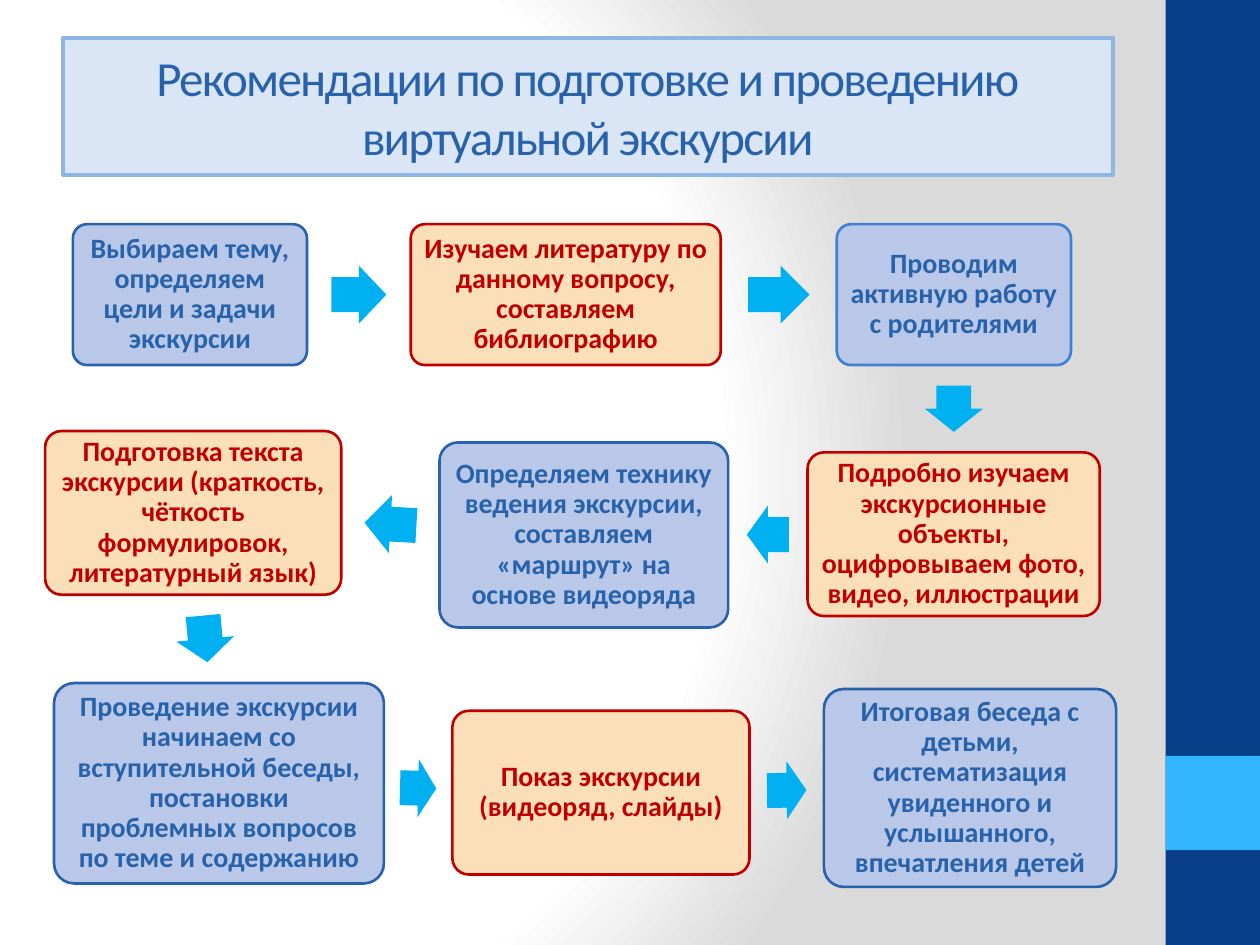
import math

from lxml import etree
from pptx import Presentation
from pptx import util as u
from pptx.dml.color import RGBColor
from pptx.enum import shapes, text
from pptx.oxml import parse_xml
from pptx.oxml.ns import nsdecls, qn

TITLE = "Рекомендации по подготовке и проведению\vвиртуальной экскурсии"
# fill, line, font
BLUE = ("B9C8E8", "2862AA", "2862AA")
LIGHT_BLUE = ("B9C8E8", "4081D2", "2862AA")
RED = ("FADFB8", "C00000", "C00000")

# Steps in reading order: text, palette, (left, top, width, height) in cm
STEPS = [
    ("Выбираем тему, определяем цели и задачи экскурсии",
     BLUE, (1.47, 4.52, 4.72, 2.84)),
    ("Изучаем литературу по данному вопросу, составляем библиографию",
     RED, (8.28, 4.52, 6.25, 2.84)),
    ("Проводим активную работу с родителями",
     LIGHT_BLUE, (16.87, 4.52, 4.72, 2.84)),
    ("Подробно изучаем экскурсионные объекты, оцифровываем фото, видео, иллюстрации",
     RED, (16.28, 9.12, 5.89, 3.3)),
    ("Определяем технику ведения экскурсии, составляем «маршрут» на основе видеоряда",
     BLUE, (8.86, 8.92, 5.82, 3.73)),
    ("Подготовка текста экскурсии (краткость, чёткость формулировок, литературный язык)",
     RED, (0.91, 8.69, 5.97, 3.3)),
    ("Проведение экскурсии начинаем со вступительной беседы, постановки "
     "проблемных вопросов по теме и содержанию",
     BLUE, (1.09, 13.77, 6.65, 4.04)),
    ("Показ экскурсии (видеоряд, слайды)",
     RED, (9.12, 14.33, 5.99, 3.3)),
    ("Итоговая беседа с детьми, систематизация увиденного и услышанного, "
     "впечатления детей",
     BLUE, (16.61, 13.89, 5.89, 3.99)),
]
ARROW_HEIGHT = 1.17
ARROW_SHARE = 0.53  # arrow length as a share of the gap between two steps

prs = Presentation()
prs.slide_width, prs.slide_height = u.Cm(25.4), u.Cm(19.05)
slide = prs.slides.add_slide(prs.slide_layouts[6])


def color(value):
    return RGBColor.from_string(value)


def add_block(kind, place, fill, line=None, width=0):
    block = slide.shapes.add_shape(kind, *map(u.Cm, place))
    block.shadow.inherit = False
    block.fill.solid()
    block.fill.fore_color.rgb = color(fill)
    if line:
        block.line.color.rgb = color(line)
        block.line.width = u.Pt(width)
    else:
        block.line.fill.background()
    return block


def write(block, words, size, font_color, bold=False, inset=None):
    frame = block.text_frame
    frame.word_wrap = True
    frame.vertical_anchor = text.MSO_ANCHOR.MIDDLE
    if inset is not None:
        frame.margin_left = frame.margin_right = u.Cm(inset)
        frame.margin_top = frame.margin_bottom = u.Cm(inset)
    frame.text = words
    paragraph = frame.paragraphs[0]
    paragraph.alignment = text.PP_ALIGN.CENTER
    font = paragraph.font
    font.name, font.size, font.bold = "Calibri", u.Pt(size), bold
    font.color.rgb = color(font_color)
    return paragraph


def add_arrow(start, end):
    """Arrow in the middle of the gap, along the line between step centres."""
    (x1, y1), (x2, y2) = [(l + w / 2, t + h / 2) for l, t, w, h in (start, end)]
    dx, dy = x2 - x1, y2 - y1
    axis = 0 if abs(dx) > abs(dy) else 1
    first, second = sorted((start, end), key=lambda place: place[axis])
    near, far = first[axis] + first[axis + 2], second[axis]
    share = ((near + far) / 2 - (x1, y1)[axis]) / (dx, dy)[axis]
    length = ARROW_SHARE * (far - near)
    arrow = add_block(
        shapes.MSO_SHAPE.RIGHT_ARROW,
        (x1 + dx * share - length / 2, y1 + dy * share - ARROW_HEIGHT / 2,
         length, ARROW_HEIGHT), "00B0F0")
    arrow.adjustments[0], arrow.adjustments[1] = 0.6, 0.5
    arrow.rotation = math.degrees(math.atan2(dy, dx)) % 360


# Background gradient
slide.background.fill.solid()
properties = slide.background._cSld.find(".//" + qn("p:bgPr"))
properties.replace(properties[0], parse_xml(
    f'<a:gradFill {nsdecls("a")} rotWithShape="1"><a:gsLst>'
    + "".join(f'<a:gs pos="{pos}000"><a:srgbClr val="{value}"/></a:gs>'
              for pos, value in ((0, "FFFFFF"), (75, "FFFFFF"), (100, "DADADA")))
    + '</a:gsLst><a:path path="circle">'
      '<a:fillToRect l="20000" t="50000" r="100000" b="50000"/></a:path></a:gradFill>'))

# Side band with accent
add_block(shapes.MSO_SHAPE.RECTANGLE, (23.5, 0, 1.9, 19.05), "073E87")
add_block(shapes.MSO_SHAPE.RECTANGLE, (23.5, 15.24, 1.9, 1.9), "31B6FD")

# Title
heading = add_block(shapes.MSO_SHAPE.RECTANGLE, (1.27, 0.76, 21.16, 2.77),
                    "DAE6F6", "8FB5E5", 2.25)
for run in write(heading, TITLE, 28, "2862AA").runs:
    run.font._element.set("spc", "-100")

# Steps
for words, (fill, line, font_color), place in STEPS:
    step = add_block(shapes.MSO_SHAPE.ROUNDED_RECTANGLE, place, fill, line, 1.5)
    step.adjustments[0] = 0.1
    write(step, words, 16, font_color, bold=True, inset=0.17).line_spacing = 0.9

# Arrows between neighbouring steps
for (*_, start), (*_, end) in zip(STEPS, STEPS[1:]):
    add_arrow(start, end)

prs.save("out.pptx")
